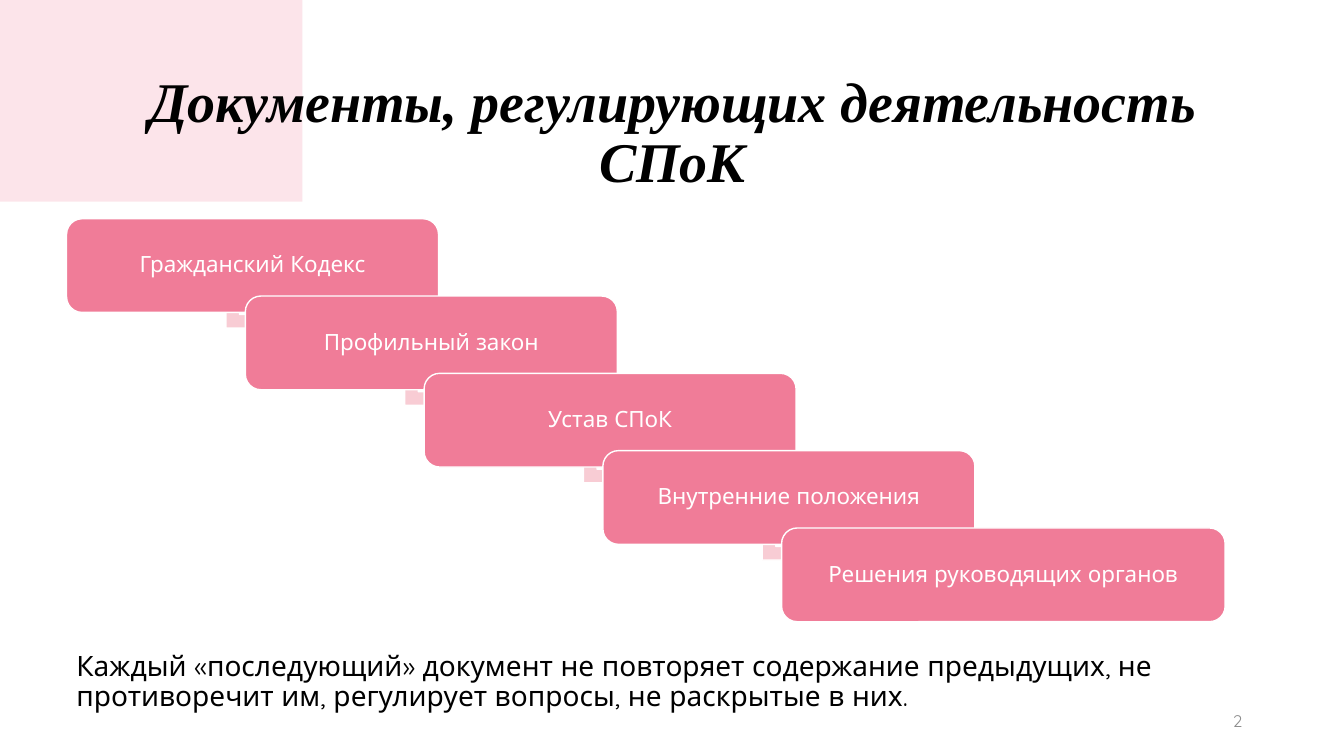
from pptx import Presentation
from pptx.dml.color import RGBColor
from pptx.enum.shapes import MSO_SHAPE
from pptx.enum.text import MSO_ANCHOR, PP_ALIGN
from pptx.oxml.ns import qn
from pptx.util import Inches, Pt
from lxml import etree

COLORS = {"pink": "F07C98", "pale": "F8CCD4", "white": "FFFFFF",
          "black": "000000", "gray": "8C8C8C"}
BODY_FONT = "Quicksand"
DOCUMENTS = ["Гражданский Кодекс", "Профильный закон", "Устав СПоК",
             "Внутренние положения", "Решения руководящих органов"]
STEP_X, STEP_Y = 1.773, 0.767

# Brush outline in inches: smooth top, torn right edge, smooth bottom
BRUSH_POINTS = [
    (0, 0.34), (0.66, 0.38), (1.94, 0.41), (2.65, 0.41), (2.8, 0.47),
    (2.53, 0.57), (2.62, 0.62), (2.38, 0.66), (2.75, 0.74), (2.51, 0.75),
    (2.9, 0.85), (2.63, 0.88), (3.3, 0.94), (3.18, 1.06), (2.8, 1.2),
    (2.74, 1.28), (3.08, 1.28), (2.69, 1.38), (2.52, 1.48), (2.63, 1.48),
    (1.97, 1.72), (1.02, 1.88), (0.65, 1.91), (0, 1.88),
]


def rgb(name):
    return RGBColor.from_string(COLORS[name])


def smooth(points, steps=5):
    """Catmull-Rom curve through the points."""
    padded = [points[0], *points, points[-1]]
    curve = [points[0]]
    for a, b, c, d in zip(padded, padded[1:], padded[2:], padded[3:]):
        for i in range(1, steps + 1):
            t = i / steps
            curve.append(tuple(
                q + t / 2 * (r - p + t * (2 * p - 5 * q + 4 * r - u
                                          + t * (3 * (q - r) + u - p)))
                for p, q, r, u in zip(a, b, c, d)))
    return curve


def add_brush_stroke(s):
    start, *rest = smooth(BRUSH_POINTS)
    builder = s.shapes.build_freeform(*start, scale=Inches(1))
    builder.add_line_segments(rest, close=True)
    sp = builder.convert_to_shape()
    sp.shadow.inherit = False
    sp.fill.solid()
    sp.fill.fore_color.rgb = rgb("pink")
    sp.line.fill.background()
    color = sp.element.spPr.find(qn("a:solidFill"))[0]
    etree.SubElement(color, qn("a:alpha"), val="20000")


def write(sp, text, size, color, align=PP_ALIGN.LEFT, anchor=MSO_ANCHOR.MIDDLE,
          font=BODY_FONT, spacing=0.9):
    tf = sp.text_frame
    tf.word_wrap = True
    tf.vertical_anchor = anchor
    p = tf.paragraphs[0]
    p.text = text
    p.alignment = align
    p.line_spacing = spacing
    p.font.size = Pt(size)
    p.font.name = font
    p.font.color.rgb = rgb(color)
    return p


def add_text(s, x, y, w, h, *args, **style):
    box = s.shapes.add_textbox(Inches(x), Inches(y), Inches(w), Inches(h))
    return write(box, *args, **style)


def add_preset(s, preset, x, y, w, h, fill, adjustments):
    sp = s.shapes.add_shape(preset, Inches(x), Inches(y), Inches(w), Inches(h))
    sp.shadow.inherit = False
    sp.fill.solid()
    sp.fill.fore_color.rgb = rgb(fill)
    sp.line.color.rgb = rgb("white")
    sp.line.width = Pt(1)
    for i, value in enumerate(adjustments):
        sp.adjustments[i] = value
    return sp


def add_staircase(s):
    last = len(DOCUMENTS) - 1
    for i, name in enumerate(DOCUMENTS):
        dx, dy = i * STEP_X, i * STEP_Y
        if i < last:
            arrow = add_preset(s, MSO_SHAPE.BENT_UP_ARROW, 2.27 + dx, 2.85 + dy,
                               0.41, 0.47, "pale", (0.33, 0.25, 0.36))
            arrow.rotation = 90
        width = 4.4 if i == last else 3.69
        box = add_preset(s, MSO_SHAPE.ROUNDED_RECTANGLE, 0.66 + dx, 2.17 + dy,
                         width, 0.93, "pink", (0.167,))
        write(box, name, 16, "white", PP_ALIGN.CENTER)


def main():
    prs = Presentation()
    prs.slide_width, prs.slide_height = Inches(13.33), Inches(7.5)
    s = prs.slides.add_slide(prs.slide_layouts[6])
    add_brush_stroke(s)
    title = add_text(s, 0.92, 0.61, 11.5, 1.45,
                     "Документы, регулирующих деятельность СПоК", 40, "black",
                     PP_ALIGN.CENTER, font="Times New Roman")
    title.font.bold = title.font.italic = True
    note = add_text(s, 0.66, 6.42, 11.5, 0.94,
                    "Каждый «последующий» документ не повторяет содержание "
                    "предыдущих, не противоречит им, регулирует вопросы, "
                    "не раскрытые в них.", 20, "black", anchor=MSO_ANCHOR.TOP)
    note.space_before = Pt(10)
    add_staircase(s)
    add_text(s, 9.42, 6.95, 3, 0.4, "2", 12, "gray", PP_ALIGN.RIGHT, spacing=1.0)
    prs.save("out.pptx")


if __name__ == "__main__":
    main()
